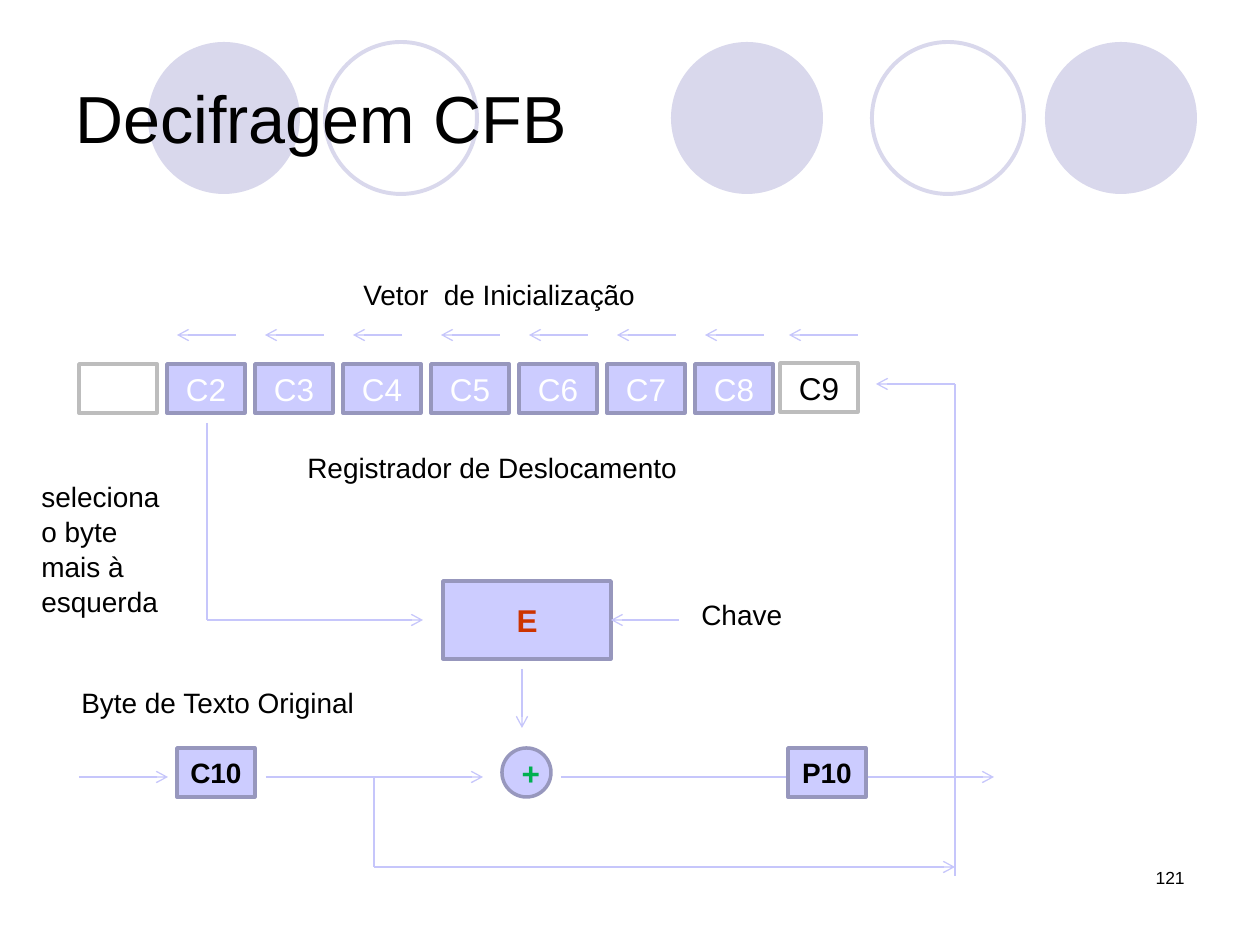
from dataclasses import dataclass

from lxml.etree import SubElement
from pptx import Presentation
from pptx.dml.color import RGBColor
from pptx.enum.shapes import MSO_CONNECTOR, MSO_SHAPE
from pptx.enum.text import MSO_ANCHOR, PP_ALIGN
from pptx.oxml.ns import qn
from pptx.util import Emu, Pt


@dataclass(frozen=True)
class Theme:
    """Colours, type sizes and line widths of the slide."""
    font: str = "Arial"
    black: str = "000000"
    white: str = "FFFFFF"
    halo: str = "D9D8EC"
    lilac: str = "CCCCFF"
    lilac_edge: str = "9797BD"
    grey_edge: str = "BDBDBD"
    arrow: str = "C6C6FB"
    red: str = "CC3300"
    green: str = "00B050"
    title: int = 38
    symbol: int = 18
    label: int = 16
    number: int = 10
    edge_width: float = 2
    halo_width: float = 2.25
    arrow_width: float = 0.75
    leading: float = 1.04


THEME = Theme()
PX_PER_INCH = 126
CELL_WIDTH, CELL_HEIGHT = 78, 49


def px(length):
    """Turn a length in px into EMU."""
    return Emu(round(length * 914400 / PX_PER_INCH))


def write(frame, text, size, color=THEME.black, bold=False, align=PP_ALIGN.LEFT):
    """Put one styled run into a text frame."""
    frame.word_wrap = True
    para = frame.paragraphs[0]
    para.alignment = align
    span = para.add_run()
    span.text = text
    span.font.name = THEME.font
    span.font.size = Pt(size)
    span.font.bold = bold
    span.font.color.rgb = RGBColor.from_string(color)
    return para


def add_label(page, box, text, size=THEME.label, align=PP_ALIGN.LEFT, anchor=MSO_ANCHOR.TOP):
    """Add a text box and return its paragraph."""
    frame = page.shapes.add_textbox(*map(px, box)).text_frame
    frame.vertical_anchor = anchor
    return write(frame, text, size, align=align)


def add_block(page, box, kind=MSO_SHAPE.RECTANGLE, fill=THEME.lilac, edge=THEME.lilac_edge,
              width=THEME.edge_width):
    """Add a preset shape with an optional fill and edge."""
    shape = page.shapes.add_shape(kind, *map(px, box))
    shape.shadow.inherit = False
    if fill:
        shape.fill.solid()
        shape.fill.fore_color.rgb = RGBColor.from_string(fill)
    else:
        shape.fill.background()
    if edge:
        shape.line.color.rgb = RGBColor.from_string(edge)
        shape.line.width = Pt(width)
    else:
        shape.line.fill.background()
    return shape


def add_symbol(page, box, text, size, color, bold=True, **style):
    """Add a shape with centred text."""
    frame = add_block(page, box, **style).text_frame
    frame.vertical_anchor = MSO_ANCHOR.MIDDLE
    write(frame, text, size, color, bold, PP_ALIGN.CENTER)


def add_path(page, *points):
    """Join points by straight lines, with an arrowhead at the last one."""
    for start, end in zip(points, points[1:]):
        line = page.shapes.add_connector(MSO_CONNECTOR.STRAIGHT, *map(px, start + end))
        line.line.color.rgb = RGBColor.from_string(THEME.arrow)
        line.line.width = Pt(THEME.arrow_width)
        properties = line._element.spPr
        if end == points[-1]:
            SubElement(properties.get_or_add_ln(), qn("a:tailEnd"), type="arrow")
        SubElement(properties, qn("a:effectLst"))


def add_header(page, box):
    """Draw the row of circles and the title over it."""
    left, top, width, height = box
    circles = ((85, True), (262, False), (608, True), (809, False), (982, True))
    for offset, filled in circles:
        add_block(page, (left + offset, top + 4, 152, 152), MSO_SHAPE.OVAL,
                  THEME.halo if filled else None, None if filled else THEME.halo,
                  THEME.halo_width)
    add_label(page, box, "Decifragem CFB", THEME.title, anchor=MSO_ANCHOR.MIDDLE)


def add_register(page, box):
    """Draw the shift register with its shift arrows and captions."""
    left, top, width, height = box
    pitch = (width - CELL_WIDTH - 4) / 7.92
    cell_top = top + 98
    add_block(page, (left, cell_top, CELL_WIDTH, CELL_HEIGHT),
              fill=THEME.white, edge=THEME.grey_edge)
    for index in range(1, 8):
        add_symbol(page, (left + index * pitch, cell_top, CELL_WIDTH, CELL_HEIGHT),
                   f"C{index + 1}", THEME.symbol, THEME.white, bold=False)
    last_left = left + width - CELL_WIDTH
    add_symbol(page, (last_left, cell_top - 1, CELL_WIDTH, CELL_HEIGHT), "C9",
               THEME.symbol, THEME.black, bold=False, fill=THEME.white, edge=THEME.grey_edge)
    tips = [left + index * pitch + 10 for index in range(1, 8)] + [last_left + 9]
    for tip, length in zip(tips, (59, 59, 49, 59, 59, 59, 59, 69)):
        add_path(page, (tip + length, top + 69), (tip, top + 69))
    add_label(page, (left + 272, top + 5, 440, 47), "Vetor  de Inicialização")
    add_label(page, (left + 216, top + 178, 542, 47), "Registrador de Deslocamento")


def add_encryption(page, box):
    """Draw the selected byte and the key entering block E."""
    left, top, width, height = box
    middle = top + 197
    note = add_label(page, (left, top + 49, 158, 149), "seleciona o byte mais à esquerda")
    note.line_spacing = THEME.leading
    add_path(page, (left + 178, top), (left + 178, middle), (left + 394, middle))
    add_symbol(page, (left + 414, top + 158, 168, 78), "E", THEME.symbol, THEME.red)
    add_path(page, (left + 650, middle), (left + 582, middle))
    add_label(page, (left + 660, top + 168, 118, 47), "Chave")
    add_path(page, (left + 493, top + 246), (left + 493, top + 305))


def add_stream(page, box):
    """Draw the byte stream from C10 through the sum to P10."""
    left, top, width, height = box
    middle, block_top = top + 98, top + 69
    add_label(page, (left - 10, top, 344, 47), "Byte de Texto Original")
    for start, end in ((0, 89), (187, 404), (482, width)):
        add_path(page, (left + start, middle), (left + end, middle))
    for offset, text in ((98, "C10"), (709, "P10")):
        add_symbol(page, (left + offset, block_top, CELL_WIDTH, CELL_HEIGHT),
                   text, THEME.label, THEME.black)
    add_symbol(page, (left + 423, block_top, CELL_HEIGHT, CELL_HEIGHT), "+",
               THEME.symbol, THEME.green, kind=MSO_SHAPE.OVAL)


def add_feedback(page, box):
    """Draw the path that returns the cipher byte to the register."""
    left, top, width, height = box
    right, bottom = left + width, top + height
    add_path(page, (left, bottom - 98), (left, bottom - 9), (right, bottom - 9))
    add_path(page, (right, bottom), (right, top), (right - 79, top))


def main():
    """Build and save the slide."""
    deck = Presentation()
    deck.slide_width, deck.slide_height = px(1260), px(945)
    page = deck.slides.add_slide(deck.slide_layouts[6])
    add_header(page, (63, 38, 1134, 157))
    add_register(page, (79, 266, 779, 225))
    add_encryption(page, (29, 423, 778, 305))
    add_stream(page, (79, 679, 915, 118))
    add_feedback(page, (374, 384, 581, 492))
    add_label(page, (903, 861, 294, 63), "121", THEME.number, PP_ALIGN.RIGHT)
    deck.save("out.pptx")


if __name__ == "__main__":
    main()
